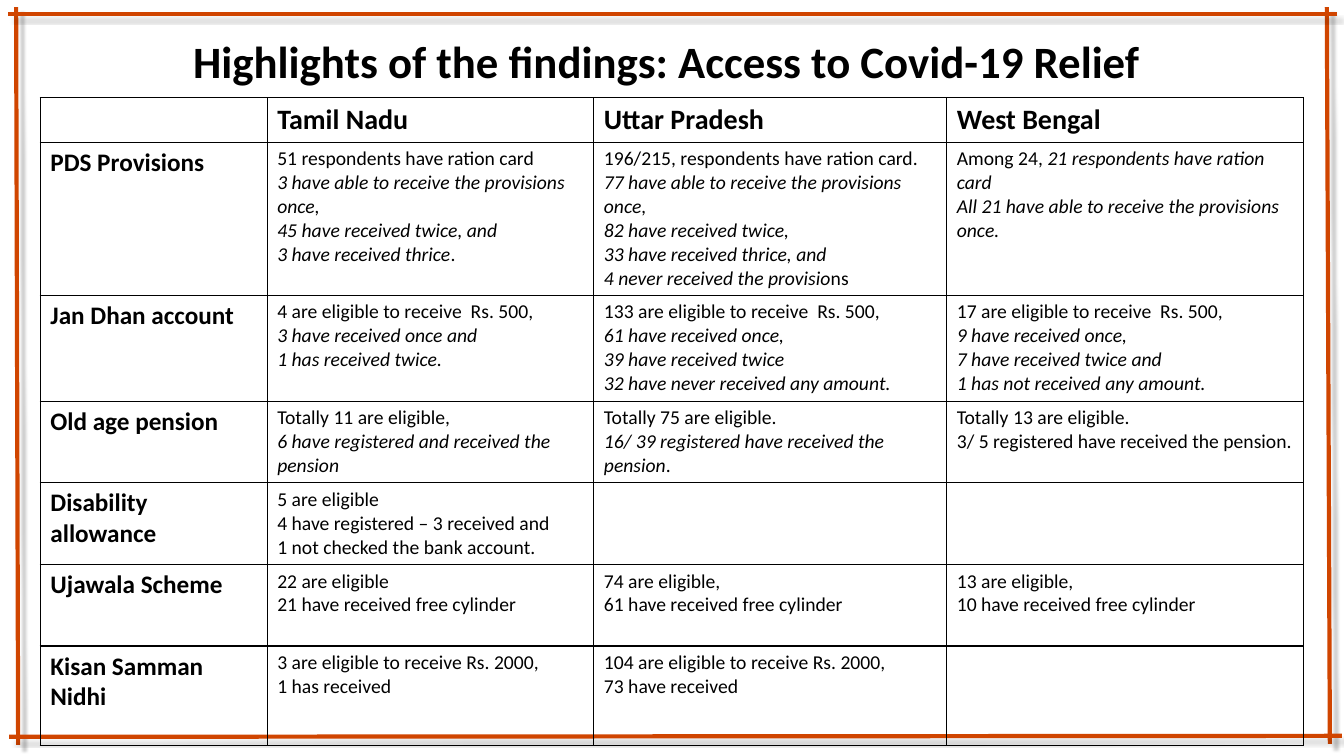
import dataclasses
import typing

import lxml.etree
import pptx
import pptx.dml.color
import pptx.enum.shapes
import pptx.enum.text
import pptx.oxml
import pptx.oxml.ns
import pptx.util

Inches = pptx.util.Inches
Pt = pptx.util.Pt
RGB = pptx.dml.color.RGBColor


@dataclasses.dataclass(frozen=True)
class Theme:
    font: str = "Calibri"
    ink: str = "000000"
    frame: str = "D04500"
    title: int = 32
    head: int = 20
    label: int = 18
    body: int = 14


@dataclasses.dataclass(frozen=True)
class Edge:
    x1: float
    y1: float
    x2: float
    y2: float


@dataclasses.dataclass(frozen=True)
class Row:
    """One scheme; asterisks enclose the italic parts of a line."""
    high: float
    label: str
    cells: tuple[tuple[str, ...], ...]


THEME = Theme()

EDGES = (
    Edge(0.16, 0.07, 0.18, 7.39),
    Edge(13.16, 0.07, 13.19, 7.38),
    Edge(0.09, 7.31, 13.31, 7.3),
    Edge(0.08, 0.14, 13.26, 0.14),
)

WIDTHS = (2.25, 3.24, 3.5, 3.54)

ROWS = (
    Row(0.44, "", (("Tamil Nadu",), ("Uttar Pradesh",), ("West Bengal",))),
    Row(1.52, "PDS Provisions", (
        ("51 respondents have ration card",
         "*3 have able to receive the provisions once,*",
         "*45 have received twice, and*",
         "*3 have received thrice*."),
        ("196/215, respondents have ration card.",
         "*77 have able to receive the provisions once,*",
         "*82 have received twice,*",
         "*33 have received thrice, and*",
         "*4 never received the provisio*ns"),
        ("Among 24, *21 respondents have ration card*",
         "*All 21 have able to receive the provisions once.*"),
    )),
    Row(1.05, "Jan Dhan account", (
        ("4 are eligible to receive  Rs. 500,",
         "*3 have received once and*",
         "*1 has received twice.*"),
        ("133 are eligible to receive  Rs. 500,",
         "*61 have received once,*",
         "*39 have received twice*",
         "*32 have never received any amount.*"),
        ("17 are eligible to receive  Rs. 500,",
         "*9 have received once,*",
         "*7 have received twice and*",
         "*1 has not received any amount.*"),
    )),
    Row(0.81, "Old age pension", (
        ("Totally 11 are eligible,",
         "*6 have registered and received the pension*"),
        ("Totally 75 are eligible.",
         "*16/ 39 registered have received the pension*."),
        ("Totally 13 are eligible.",
         "3/ 5 registered have received the pension."),
    )),
    Row(0.81, "Disability allowance", (
        ("5 are eligible",
         "4 have registered – 3 received and",
         "1 not checked the bank account."),
        (), (),
    )),
    Row(0.81, "Ujawala Scheme", (
        ("22 are eligible", "21 have received free cylinder"),
        ("74 are eligible,", "61 have received free cylinder"),
        ("13 are eligible,", "10 have received free cylinder"),
    )),
    Row(0.99, "Kisan Samman Nidhi", (
        ("3 are eligible to receive Rs. 2000,", "1 has received"),
        ("104 are eligible to receive Rs. 2000,", "73 have received"),
        (),
    )),
)


def write(frame: typing.Any, lines: tuple[str, ...], size: int, bold: bool) -> None:
    """Fill a text frame, one paragraph a line."""
    for row, line in enumerate(lines):
        para = frame.add_paragraph() if row else frame.paragraphs[0]
        for part, words in enumerate(line.split("*")):
            if not words:
                continue
            run = para.add_run()
            run.text = words
            run.font.name = THEME.font
            run.font.size = Pt(size)
            run.font.bold = bold
            run.font.italic = part % 2 == 1
            run.font.color.rgb = RGB.from_string(THEME.ink)


def draw_edge(slide: typing.Any, edge: Edge) -> None:
    """Draw one frame line with its soft shadow."""
    line = slide.shapes.add_connector(
        pptx.enum.shapes.MSO_CONNECTOR.STRAIGHT,
        Inches(edge.x1), Inches(edge.y1), Inches(edge.x2), Inches(edge.y2))
    line.line.color.rgb = RGB.from_string(THEME.frame)
    line.line.width = Pt(3)
    props = line._element.spPr
    props.append(pptx.oxml.parse_xml(
        f'<a:effectLst {pptx.oxml.ns.nsdecls("a")}>'
        f'<a:outerShdw blurRad="{Pt(2)}" dist="{Pt(6)}" dir="2700000">'
        f'<a:srgbClr val="{THEME.ink}"><a:alpha val="20000"/></a:srgbClr>'
        '</a:outerShdw></a:effectLst>'))


def draw_title(slide: typing.Any, text: str) -> None:
    box = slide.shapes.add_textbox(Inches(0.31), 0, Inches(12.61), Inches(0.87))
    frame = box.text_frame
    frame.word_wrap = True
    frame.vertical_anchor = pptx.enum.text.MSO_ANCHOR.BOTTOM
    frame.margin_left = frame.margin_right = 0
    frame.margin_top = frame.margin_bottom = 0
    write(frame, (text,), THEME.title, True)
    frame.paragraphs[0].alignment = pptx.enum.text.PP_ALIGN.CENTER


def rule_cell(cell: typing.Any) -> None:
    """Give a cell thin black borders and no fill."""
    cell.fill.background()
    props = cell._tc.get_or_add_tcPr()
    for spot, side in enumerate(("lnL", "lnR", "lnT", "lnB")):
        rule = pptx.oxml.parse_xml(
            f'<a:{side} {pptx.oxml.ns.nsdecls("a")} w="{Pt(1)}"><a:solidFill>'
            f'<a:srgbClr val="{THEME.ink}"/></a:solidFill></a:{side}>')
        props.insert(spot, rule)


def draw_table(slide: typing.Any, rows: tuple[Row, ...]) -> None:
    high = sum(row.high for row in rows)
    table = slide.shapes.add_table(
        len(rows), len(WIDTHS), Inches(0.4), Inches(0.97),
        Inches(sum(WIDTHS)), Inches(high)).table
    table.first_row = table.horz_banding = False
    for col, width in zip(table.columns, WIDTHS):
        col.width = Inches(width)
    for top, row in enumerate(rows):
        table.rows[top].height = Inches(row.high)
        label = (row.label,) if row.label else ()
        for left, lines in enumerate((label, *row.cells)):
            cell = table.cell(top, left)
            rule_cell(cell)
            size = THEME.head if top == 0 else THEME.body if left else THEME.label
            write(cell.text_frame, lines, size, top == 0 or left == 0)


def main() -> None:
    deck = pptx.Presentation()
    deck.slide_width, deck.slide_height = Inches(13.33), Inches(7.5)
    slide = deck.slides.add_slide(deck.slide_layouts[6])
    # Frame around the slide
    for edge in EDGES:
        draw_edge(slide, edge)
    # Heading and findings
    draw_title(slide, "Highlights of the findings: Access to Covid-19 Relief")
    draw_table(slide, ROWS)
    deck.save("out.pptx")


if __name__ == "__main__":
    main()
